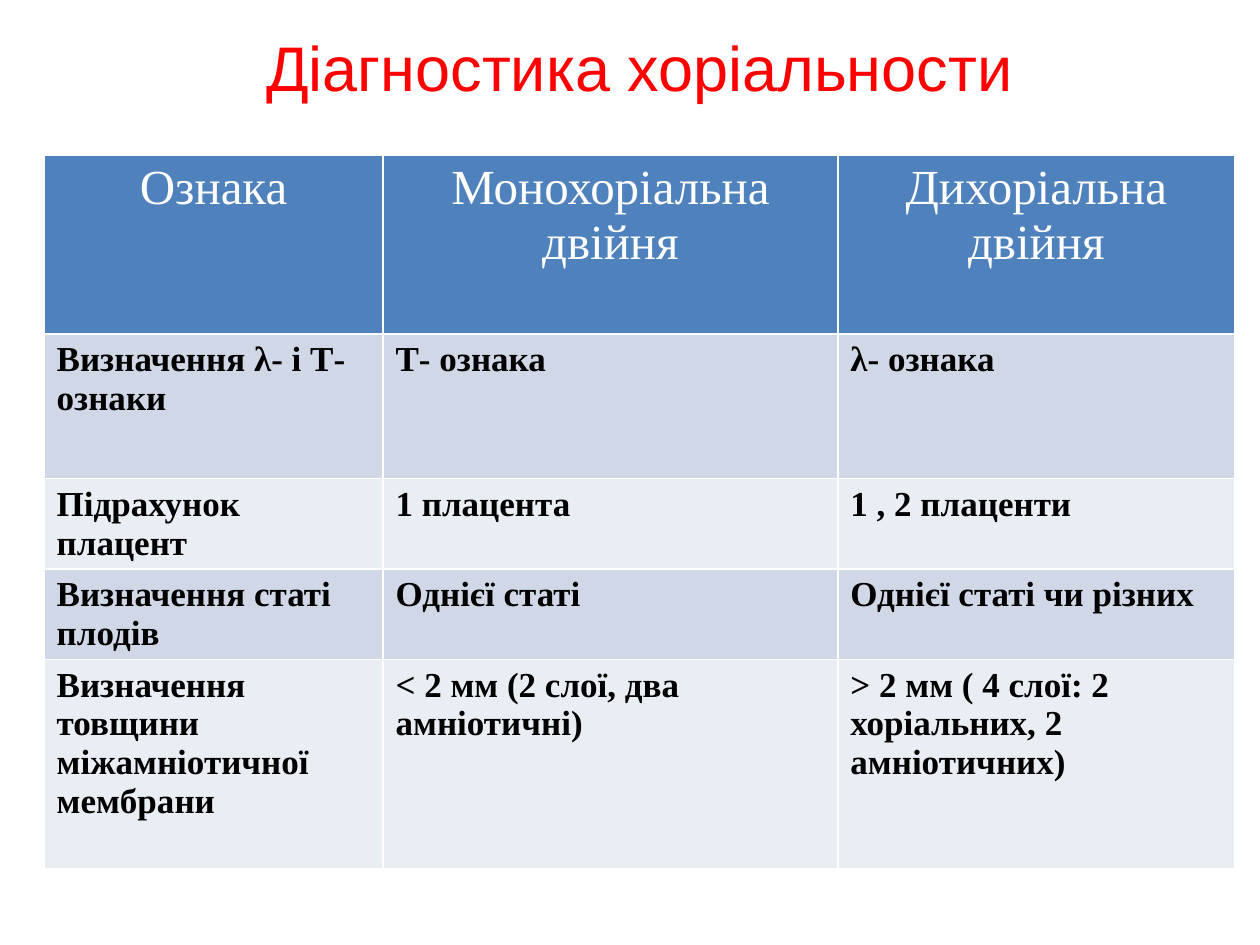
from pptx import Presentation
from pptx.dml.color import RGBColor
from pptx.enum.text import MSO_ANCHOR, PP_ALIGN
from pptx.util import Inches, Pt

COLORS = {
    "title": "FF0000",
    "header": "4F81BD",
    "header_text": "FFFFFF",
    "odd": "D0D8E8",
    "even": "E9EDF4",
    "text": "000000",
}
TITLE_FONT = {"name": "Arial", "size": Pt(36), "bold": False}
HEADER_FONT = {"name": "Times New Roman", "size": Pt(28), "bold": False}
BODY_FONT = {"name": "Times New Roman", "size": Pt(20), "bold": True}

SIGNS = [
    ["Ознака", "Монохоріальна двійня", "Дихоріальна двійня"],
    ["Визначення λ- і Т- ознаки", "Т- ознака", "λ- ознака"],
    ["Підрахунок плацент", "1 плацента", "1 , 2 плаценти"],
    ["Визначення статі плодів", "Однієї статі", "Однієї статі чи різних"],
    [
        "Визначення товщини міжамніотичної мембрани",
        "˂ 2 мм (2 слої, два амніотичні)",
        "> 2 мм ( 4 слої: 2 хоріальних, 2 амніотичних)",
    ],
]
COLUMN_WIDTHS = [2.69, 3.61, 3.15]
ROW_HEIGHTS = [1.42, 1.15, 0.71, 0.63, 1.66]
LEFT, WIDTH = Inches(0.35), Inches(sum(COLUMN_WIDTHS))


def write(frame, text, font, color, align):
    frame.text = text
    paragraph = frame.paragraphs[0]
    paragraph.alignment = align
    run_font = paragraph.runs[0].font
    for name, value in font.items():
        setattr(run_font, name, value)
    run_font.color.rgb = RGBColor.from_string(COLORS[color])


prs = Presentation()
prs.slide_width, prs.slide_height = Inches(10), Inches(7.5)
slide = prs.slides.add_slide(prs.slide_layouts[5])

heading = slide.shapes.title
heading.left, heading.top = LEFT, Inches(0.17)
heading.width, heading.height = WIDTH, Inches(0.71)
heading.text_frame.vertical_anchor = MSO_ANCHOR.MIDDLE
write(heading.text_frame, "Діагностика хоріальности", TITLE_FONT, "title", PP_ALIGN.CENTER)

signs = slide.shapes.add_table(
    len(SIGNS), len(COLUMN_WIDTHS), LEFT, Inches(1.23), WIDTH, Inches(sum(ROW_HEIGHTS))
).table
for column, width in zip(signs.columns, COLUMN_WIDTHS):
    column.width = Inches(width)
for row, height in zip(signs.rows, ROW_HEIGHTS):
    row.height = Inches(height)

for r, entries in enumerate(SIGNS):
    if r == 0:
        fill, font, color, align = "header", HEADER_FONT, "header_text", PP_ALIGN.CENTER
    else:
        fill = "odd" if r % 2 else "even"
        font, color, align = BODY_FONT, "text", PP_ALIGN.LEFT
    for c, entry in enumerate(entries):
        cell = signs.cell(r, c)
        cell.fill.solid()
        cell.fill.fore_color.rgb = RGBColor.from_string(COLORS[fill])
        write(cell.text_frame, entry, font, color, align)

prs.save("out.pptx")
